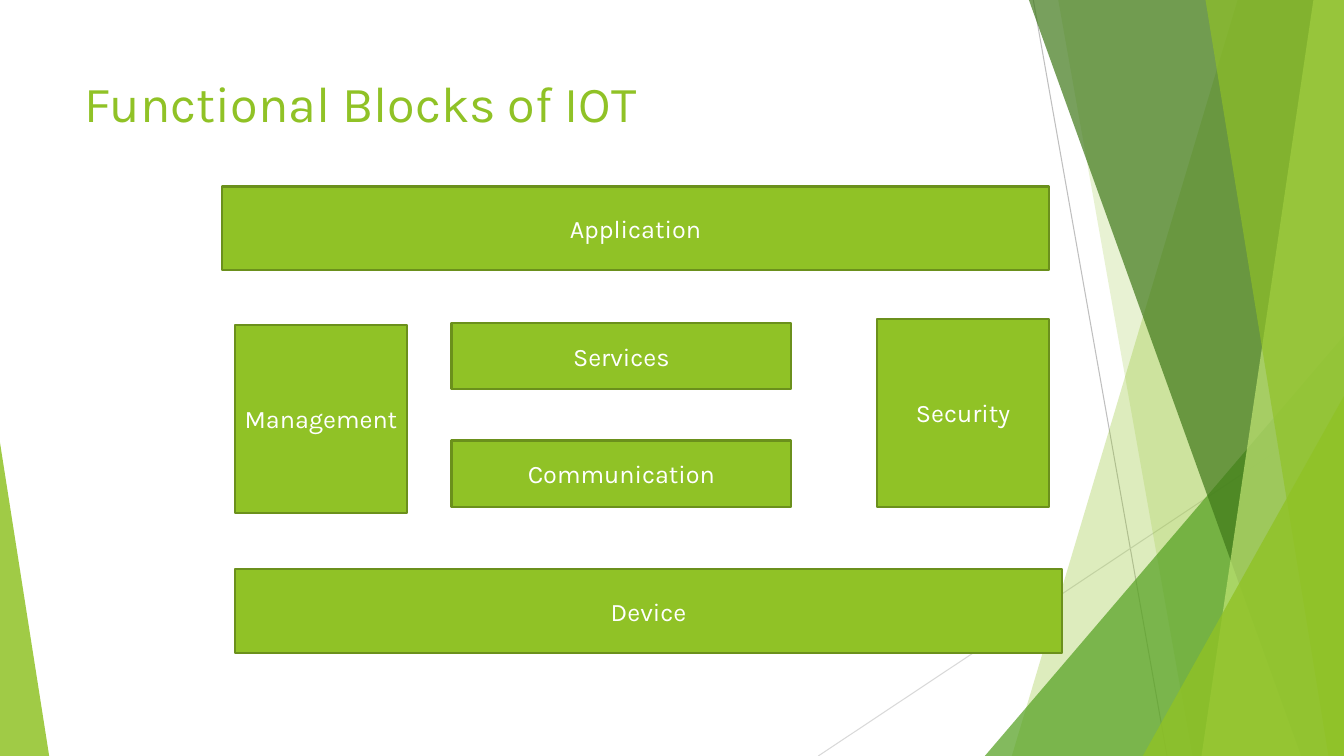
from dataclasses import dataclass

from lxml import etree
from pptx import Presentation
from pptx.dml.color import RGBColor
from pptx.enum.shapes import MSO_CONNECTOR, MSO_SHAPE
from pptx.enum.text import MSO_ANCHOR, PP_ALIGN
from pptx.oxml.ns import qn
from pptx.util import Cm, Pt

RECT, TRI = MSO_SHAPE.RECTANGLE, MSO_SHAPE.ISOSCELES_TRIANGLE
LINE = MSO_CONNECTOR.STRAIGHT
TOP, MID = MSO_ANCHOR.TOP, MSO_ANCHOR.MIDDLE
LEFT, CENTER = PP_ALIGN.LEFT, PP_ALIGN.CENTER


@dataclass(frozen=True)
class Theme:
    font: str = "Karla"
    head: int = 36
    body: int = 18
    lime: str = "90C226"
    edge: str = "6B901C"
    leaf: str = "54A021"
    moss: str = "3F7819"
    pale: str = "C0E474"
    white: str = "FFFFFF"
    gray: str = "BFBFBF"
    mist: str = "D9D9D9"


T = Theme()

# Content, lengths in cm
WIDE, HIGH = 33.87, 19.05
TITLE = "Functional Blocks of IOT"
TITLE_BOX = (1.88, 1.7, 23.88, 3.66)

BAR, SIDE, CORE = (20.85, 2.11), (4.34, 4.75), (8.56, 1.68)
BLOCKS = [  # text, left, top, size
    ("Application", 5.59, 4.7, BAR),
    ("Management", 5.92, 8.18, SIDE),
    ("Services", 11.38, 8.13, CORE),
    ("Communication", 11.38, 11.1, CORE),
    ("Security", 22.1, 8.03, SIDE),
    ("Device", 5.92, 14.35, BAR),
]

RAYS = [  # from, to, color
    ((26.04, 0), (29.41, HIGH), T.gray),
    ((WIDE, 10.24), (20.62, HIGH), T.mist),
]
# Bands run to the right edge: left x at top, left x at bottom, color, opacity
# Peaks stand on the bottom edge: left, width, height, tip, color, opacity
FACETS = [
    ("band", 31.19, 25.5, T.lime, 30),
    ("band", 26.67, 30.05, T.lime, 20),
    ("peak", 24.82, 9.05, 10.59, 1, T.leaf, 72),
    ("band", 25.93, 32.79, T.moss, 70),
    ("band", 33.1, 30.28, T.pale, 70),
    ("band", 30.38, 33.48, T.lime, 65),
    ("peak", 28.8, 5.07, 9.07, 1, T.lime, 80),
    ("peak", 0, 1.24, 7.9, 0, T.lime, 85),
]


def write(shape, text, size=T.body, color=T.white, align=CENTER, anchor=MID, pad=0.25):
    frame = shape.text_frame
    frame.word_wrap = True
    frame.vertical_anchor = anchor
    frame.margin_left = frame.margin_right = Cm(pad)
    para = frame.paragraphs[0]
    para.alignment = align
    run = para.add_run()
    run.text = text
    run.font.name = T.font
    run.font.size = Pt(size)
    run.font.color.rgb = RGBColor.from_string(color)


def paint(shape, color, clear=100, edge=None):
    shape.shadow.inherit = False
    shape.fill.solid()
    shape.fill.fore_color.rgb = RGBColor.from_string(color)
    if clear < 100:
        tint = shape.element.spPr.find(qn("a:solidFill"))[0]
        etree.SubElement(tint, qn("a:alpha")).set("val", str(clear * 1000))
    if edge:
        shape.line.color.rgb = RGBColor.from_string(edge)
        shape.line.width = Pt(1.5)
    else:
        shape.line.fill.background()


def ray(shapes, start, end, color):
    line = shapes.add_connector(LINE, *map(Cm, start + end))
    line.line.color.rgb = RGBColor.from_string(color)
    line.line.width = Pt(0.75)
    etree.SubElement(line.element.spPr, qn("a:effectLst"))


def band(shapes, top, base, color, clear):
    path = shapes.build_freeform(Cm(top), Cm(0))
    rest = [(WIDE, 0), (WIDE, HIGH), (base, HIGH)]
    path.add_line_segments([(Cm(x), Cm(y)) for x, y in rest], close=True)
    paint(path.convert_to_shape(), color, clear)


def peak(shapes, left, width, height, tip, color, clear):
    box = (left, HIGH - height, width, height)
    shape = shapes.add_shape(TRI, *map(Cm, box))
    shape.adjustments[0] = tip
    paint(shape, color, clear)


def main():
    deck = Presentation()
    deck.slide_width, deck.slide_height = Cm(WIDE), Cm(HIGH)
    slide = deck.slides.add_slide(deck.slide_layouts[5])
    shapes = slide.shapes

    # Backdrop
    for item in RAYS:
        ray(shapes, *item)
    draw = {"band": band, "peak": peak}
    for kind, *item in FACETS:
        draw[kind](shapes, *item)

    # Title, in front of the backdrop
    title = shapes.title
    title.left, title.top, title.width, title.height = map(Cm, TITLE_BOX)
    write(title, TITLE, size=T.head, color=T.lime, align=LEFT, anchor=TOP)
    title.element.getparent().append(title.element)

    # Blocks
    for text, left, top, size in BLOCKS:
        block = shapes.add_shape(RECT, *map(Cm, (left, top, *size)))
        paint(block, T.lime, edge=T.edge)
        write(block, text, pad=0.2)

    deck.save("out.pptx")


if __name__ == "__main__":
    main()
